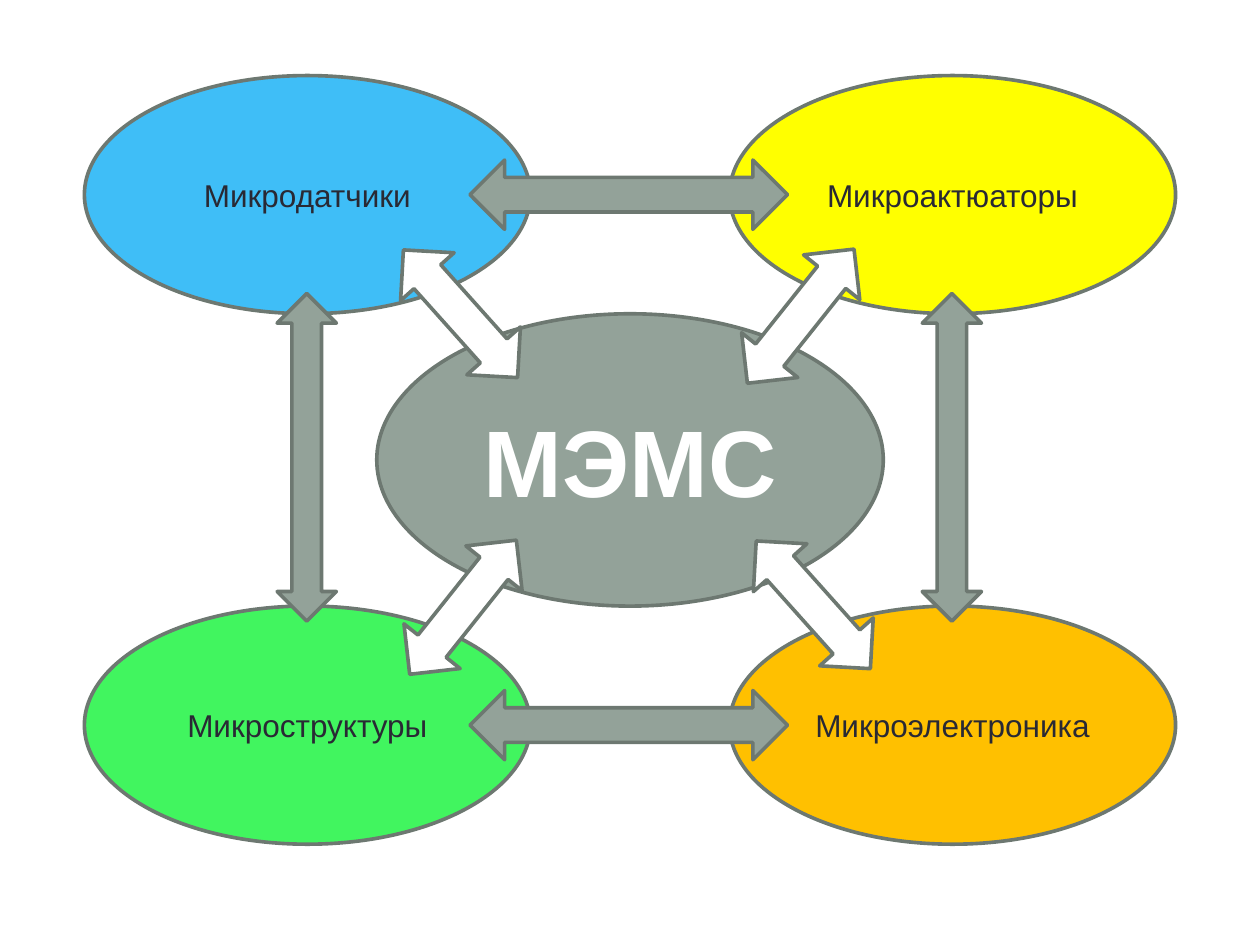
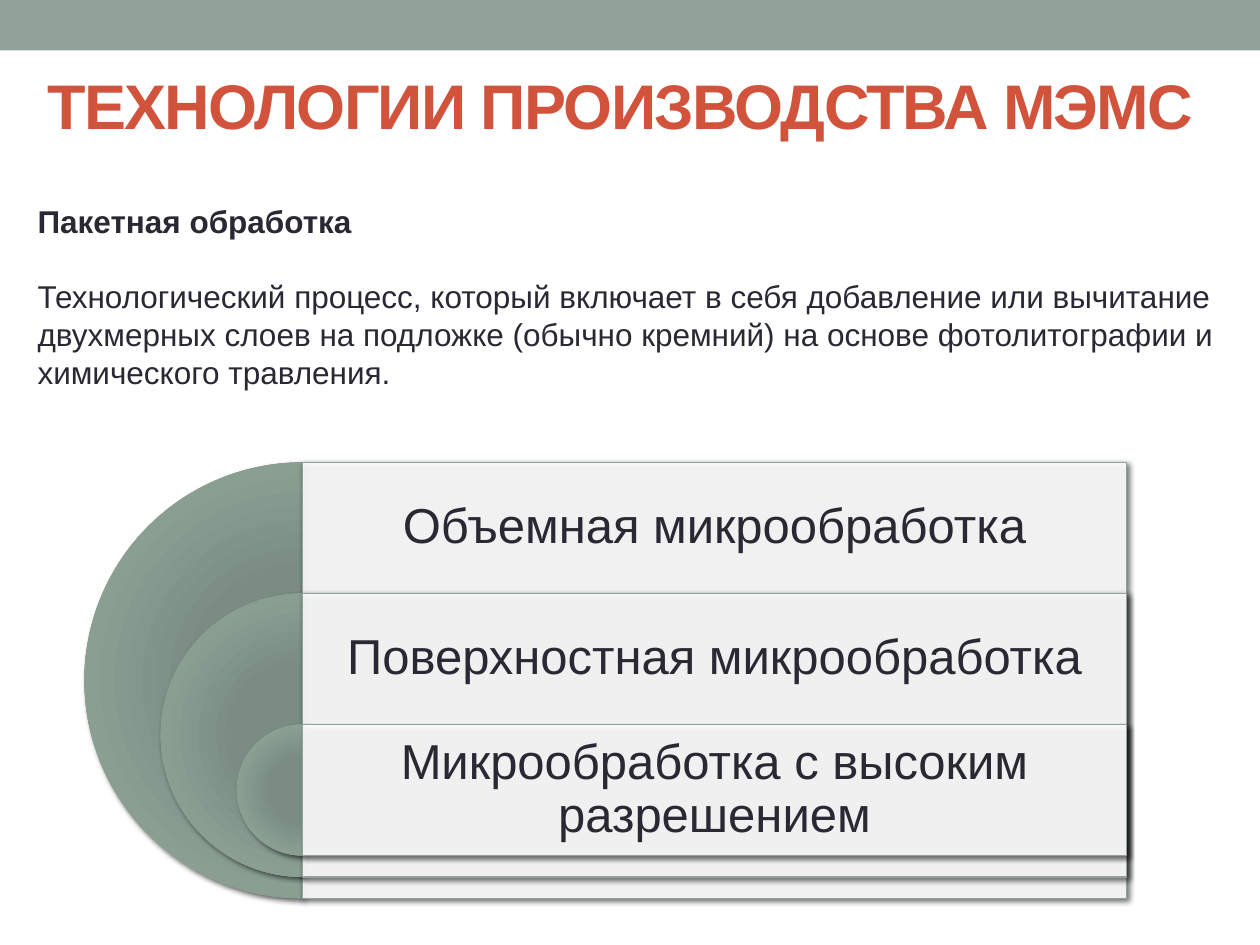
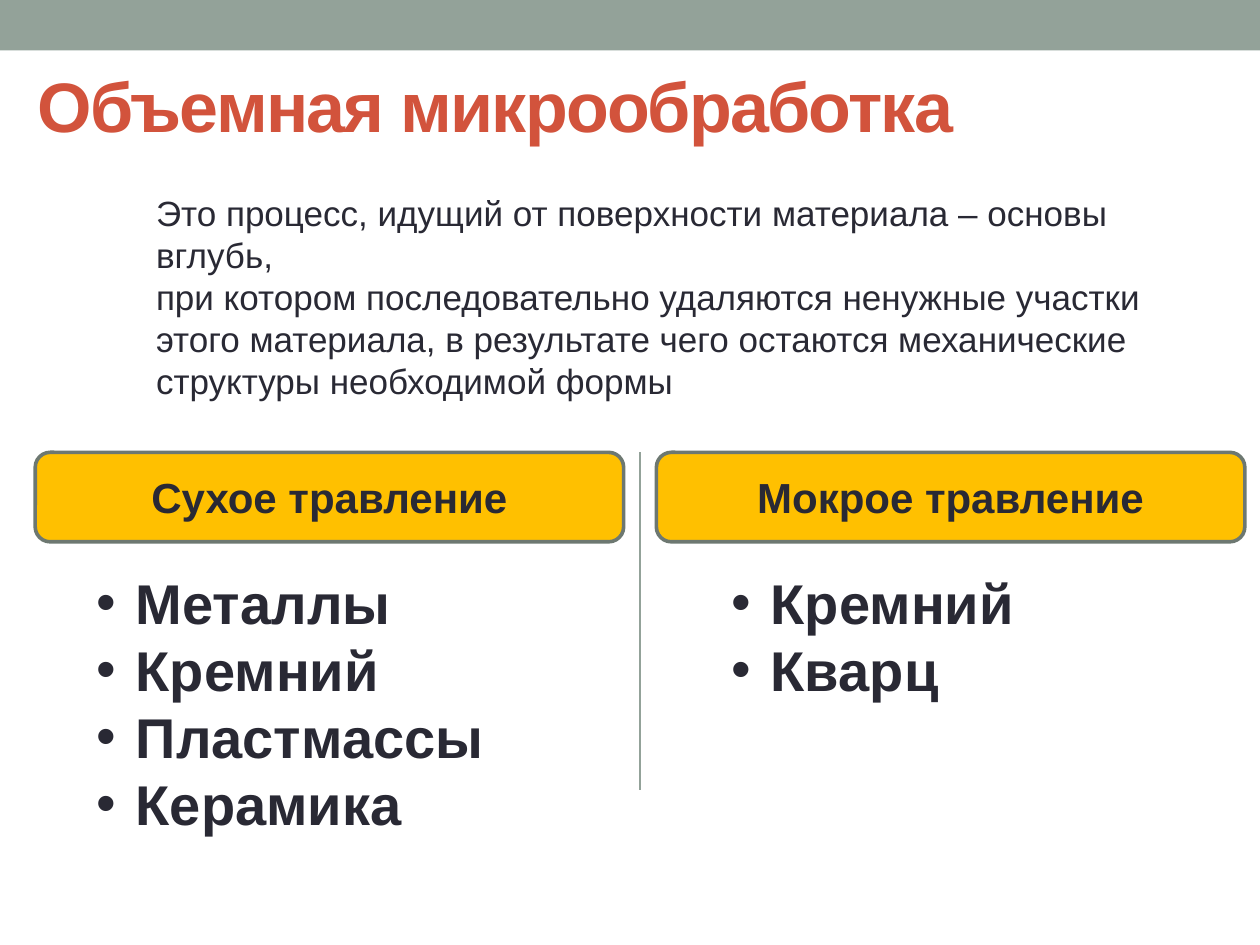
from lxml.etree import SubElement
from pptx import Presentation
from pptx.dml.color import RGBColor
from pptx.enum.shapes import MSO_CONNECTOR, MSO_SHAPE
from pptx.enum.text import MSO_ANCHOR, PP_ALIGN
from pptx.oxml import parse_xml
from pptx.oxml.ns import nsdecls, qn
from pptx.util import Inches, Pt

SAGE = RGBColor(0x93, 0xA2, 0x99)
OUTLINE = RGBColor(0x6D, 0x78, 0x71)
INK = RGBColor(0x29, 0x29, 0x34)
RUST = RGBColor(0xD2, 0x53, 0x3C)
WHITE = RGBColor(0xFF, 0xFF, 0xFF)
BLUE = RGBColor(0x3F, 0xBE, 0xF7)
YELLOW = RGBColor(0xFF, 0xFF, 0x00)
GREEN = RGBColor(0x41, 0xF5, 0x5F)
AMBER = RGBColor(0xFF, 0xC0, 0x00)

FONT = "Arial"
OUTLINE_WIDTH = 2.08

GRADIENT = f"""<a:gradFill {nsdecls("a")} rotWithShape="1"><a:gsLst>
<a:gs pos="0"><a:srgbClr val="7B8E82"/></a:gs>
<a:gs pos="34000"><a:srgbClr val="7B8D83"/></a:gs>
<a:gs pos="70000"><a:srgbClr val="8A9E92"/></a:gs>
<a:gs pos="100000"><a:srgbClr val="93A299"/></a:gs></a:gsLst>
<a:path path="circle"><a:fillToRect l="100000" t="100000" r="100000" b="100000"/></a:path>
</a:gradFill>"""
SHADOW = f"""<a:effectLst {nsdecls("a")}>
<a:outerShdw blurRad="38100" dist="25400" dir="2700000" rotWithShape="0">
<a:srgbClr val="000000"><a:alpha val="60000"/></a:srgbClr></a:outerShdw></a:effectLst>"""


def add_shape(slide, kind, box, fill, line=OUTLINE, line_width=OUTLINE_WIDTH):
    shape = slide.shapes.add_shape(kind, *map(Inches, box))
    shape.shadow.inherit = False
    shape.fill.solid()
    shape.fill.fore_color.rgb = fill
    if line is None:
        shape.line.fill.background()
    else:
        shape.line.color.rgb = line
        shape.line.width = Pt(line_width)
    return shape


def write_text(shape, lines, size, color=INK, bold=False,
               align=PP_ALIGN.CENTER, anchor=MSO_ANCHOR.MIDDLE):
    text_frame = shape.text_frame
    text_frame.word_wrap = True
    text_frame.vertical_anchor = anchor
    text_frame.text = "\n".join(lines)
    for paragraph in text_frame.paragraphs:
        paragraph.alignment = align
        for run in paragraph.runs:
            run.font.name = FONT
            run.font.size = Pt(size)
            run.font.bold = bold
            run.font.color.rgb = color
    return text_frame


presentation = Presentation()
presentation.slide_width = Inches(10)
presentation.slide_height = Inches(7.5)
blank_layout = presentation.slide_layouts[6]

overview_slide = presentation.slides.add_slide(blank_layout)
center = add_shape(overview_slide, MSO_SHAPE.OVAL, (2.99, 2.49, 4.02, 2.32), SAGE)
write_text(center, ["МЭМС"], 54, WHITE, bold=True)

components = [
    ("Микродатчики", 0.67, 0.6, BLUE),
    ("Микроактюаторы", 5.79, 0.6, YELLOW),
    ("Микроструктуры", 0.67, 4.81, GREEN),
    ("Микроэлектроника", 5.79, 4.81, AMBER),
]
for name, left, top, color in components:
    ellipse = add_shape(overview_slide, MSO_SHAPE.OVAL, (left, top, 3.54, 1.89), color)
    write_text(ellipse, [name], 18)

for top in (1.27, 5.48):
    add_shape(overview_slide, MSO_SHAPE.LEFT_RIGHT_ARROW, (3.73, top, 2.52, 0.55), SAGE)
for left in (2.2, 7.32):
    add_shape(overview_slide, MSO_SHAPE.UP_DOWN_ARROW, (left, 2.33, 0.47, 2.6), SAGE)
for left, top, angle in [(3.37, 1.81, 318.2), (6.17, 4.12, 318.2),
                         (6.07, 1.83, 38.5), (3.39, 4.14, 38.5)]:
    arrow = add_shape(overview_slide, MSO_SHAPE.UP_DOWN_ARROW, (left, top, 0.57, 1.36), WHITE)
    arrow.rotation = angle

titled_slides = []
for title, left, width, size in [("ТЕХНОЛОГИИ ПРОИЗВОДСТВА МЭМС", 0.28, 9.3, 36),
                                 ("Объемная микрообработка", 0.2, 9, 40)]:
    slide = presentation.slides.add_slide(blank_layout)
    add_shape(slide, MSO_SHAPE.RECTANGLE, (0, 0, 10, 0.4), SAGE, None)
    title_box = slide.shapes.add_textbox(Inches(left), Inches(0.29), Inches(width), Inches(1.08))
    title_frame = write_text(title_box, [title], size, RUST, True, PP_ALIGN.LEFT)
    title_frame.paragraphs[0].runs[0].font._element.set("spc", "-100")
    titled_slides.append(slide)
technology_slide, bulk_slide = titled_slides

row_height = 1.04
axis = 2.4
methods = [
    ("Объемная микрообработка", 3.46),
    ("Поверхностная микрообработка", 2.25),
    ("Микрообработка с высоким разрешением", 1.04),
]
for row, (method, diameter) in enumerate(methods):
    top = 3.67 + row * row_height
    pie = add_shape(technology_slide, MSO_SHAPE.PIE,
                    (axis - diameter / 2, top, diameter, diameter), SAGE, None)
    pie.adjustments[0] = 54
    pie.adjustments[1] = 162
    properties = pie._element.spPr
    properties.replace(properties.find(qn("a:solidFill")), parse_xml(GRADIENT))

    panel = add_shape(technology_slide, MSO_SHAPE.RECTANGLE,
                      (axis, top, 6.54, diameter), WHITE, SAGE, 0.75)
    panel_color = panel._element.spPr.find(qn("a:solidFill"))[0]
    SubElement(panel_color, qn("a:alpha")).set("val", "90000")

    for shape in (pie, panel):
        properties = shape._element.spPr
        properties.replace(properties.find(qn("a:effectLst")), parse_xml(SHADOW))

    label = technology_slide.shapes.add_textbox(
        Inches(axis), Inches(top), Inches(6.54), Inches(row_height))
    label_frame = write_text(label, [method], 28)
    label_frame.margin_left = label_frame.margin_right = Inches(0.12)
    label_frame.margin_top = label_frame.margin_bottom = Inches(0.12)
    label_frame.paragraphs[0].line_spacing = 0.9

description = technology_slide.shapes.add_textbox(
    Inches(0.2), Inches(1.55), Inches(9.57), Inches(2.52))
description_frame = write_text(description, [
    "Пакетная обработка",
    "Технологический процесс, который включает в себя добавление или вычитание "
    "двухмерных слоев на подложке (обычно кремний) на основе фотолитографии "
    "и химического травления.",
], 18, align=PP_ALIGN.LEFT, anchor=MSO_ANCHOR.TOP)
heading, body = description_frame.paragraphs
heading.runs[0].font.bold = True
body.space_before = Pt(21.5)

definition = bulk_slide.shapes.add_textbox(
    Inches(1.14), Inches(1.47), Inches(8.74), Inches(1.45))
write_text(definition, [
    "Это процесс, идущий от поверхности материала – основы вглубь,",
    "при котором последовательно удаляются ненужные участки этого материала, "
    "в результате чего остаются механические структуры необходимой формы",
], 20, align=PP_ALIGN.LEFT, anchor=MSO_ANCHOR.TOP)

etchings = [
    ("Сухое травление", 0.28, 0.67, 3.3, 2.26,
     ["Металлы", "Кремний", "Пластмассы", "Керамика"]),
    ("Мокрое травление", 5.21, 5.71, 2.46, 1.18, ["Кремний", "Кварц"]),
]
for name, left, list_left, list_width, list_height, materials in etchings:
    header = add_shape(bulk_slide, MSO_SHAPE.ROUNDED_RECTANGLE, (left, 3.59, 4.67, 0.71), AMBER)
    write_text(header, [name], 24, bold=True)
    material_box = bulk_slide.shapes.add_textbox(
        Inches(list_left), Inches(4.46), Inches(list_width), Inches(list_height))
    material_frame = write_text(material_box, materials, 32, bold=True,
                                align=PP_ALIGN.LEFT, anchor=MSO_ANCHOR.TOP)
    for paragraph in material_frame.paragraphs:
        properties = paragraph._p.get_or_add_pPr()
        properties.set("marL", str(Inches(0.31)))
        properties.set("indent", str(-Inches(0.31)))
        SubElement(properties, qn("a:buFont")).set("typeface", FONT)
        SubElement(properties, qn("a:buChar")).set("char", "•")

divider = bulk_slide.shapes.add_connector(
    MSO_CONNECTOR.STRAIGHT, Inches(5.08), Inches(3.59), Inches(5.08), Inches(6.27))
divider.line.color.rgb = SAGE
divider.line.width = Pt(0.75)
SubElement(divider._element.spPr, qn("a:effectLst"))

presentation.save("out.pptx")
